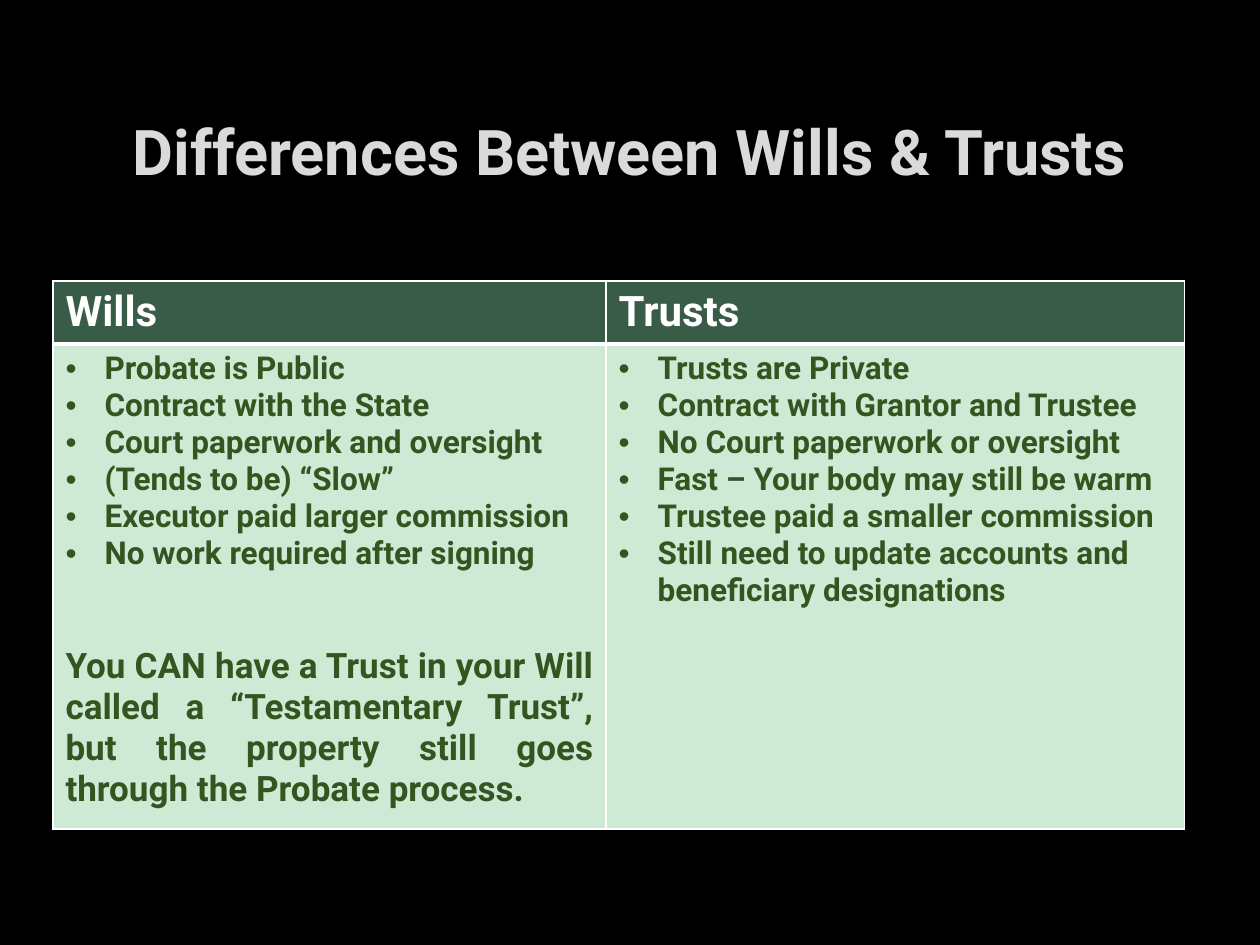
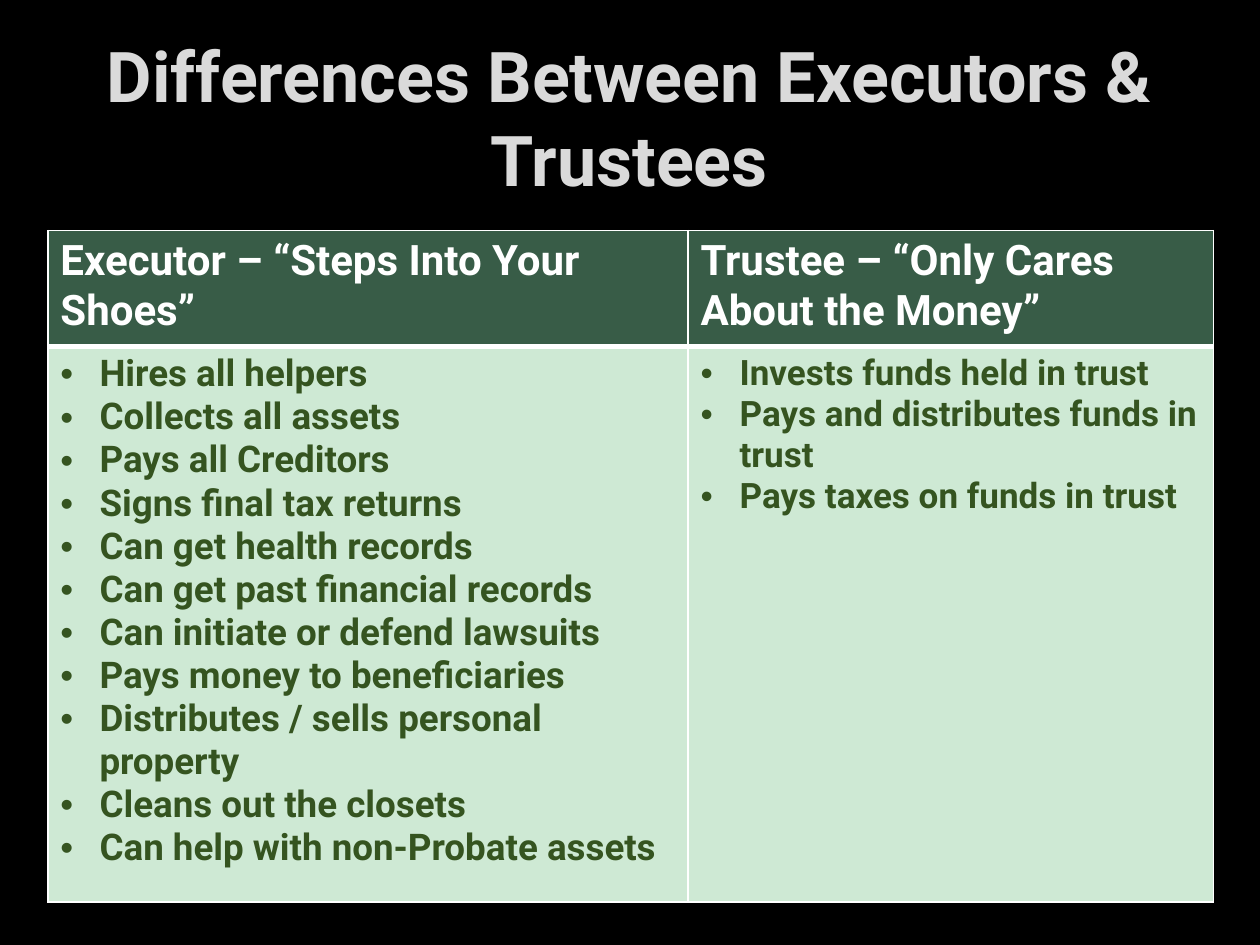
from lxml.etree import SubElement as Sub
from pptx import Presentation
from pptx.dml.color import RGBColor as RGB
from pptx.enum.text import MSO_ANCHOR as Anchor, MSO_AUTO_SIZE as Fit, PP_ALIGN as Align
from pptx.oxml import parse_xml
from pptx.oxml.ns import nsdecls, qn
from pptx.util import Inches, Pt

HUES = {"back": "000000", "title": "DADADA", "edge": "404040", "head": "385C47",
        "body": "CEE9D4", "white": "FFFFFF", "text": "355420"}
FONT = "Roboto"
INDENT = Inches(0.31)

deck = Presentation()
deck.slide_width, deck.slide_height = Inches(10), Inches(7.5)
COL, ROW = deck.slide_width / 100, deck.slide_height / 100

PAGES = [
    {"title": "Differences Between Wills & Trusts", "size": 36,
     "place": (7.5, 8.9, 84.9, 14.1), "spot": (4.2, 29.75),
     "cols": (43.9, 45.9), "rows": (6.67, 51.33),
     "heads": ("Wills", "Trusts"), "sizes": (18, 18),
     "lists": (
         ("Probate is Public", "Contract with the State",
          "Court paperwork and oversight", "(Tends to be) “Slow”",
          "Executor paid larger commission", "No work required after signing"),
         ("Trusts are Private", "Contract with Grantor and Trustee",
          "No Court paperwork or oversight", "Fast – Your body may still be warm",
          "Trustee paid a smaller commission",
          "Still need to update accounts and beneficiary designations")),
     "note": "You CAN have a Trust in your Will called a “Testamentary Trust”, "
             "but the property still goes through the Probate process."},
    {"title": "Differences Between Executors & Trustees", "size": 40,
     "place": (6, 2.3, 87.9, 20), "spot": (3.8, 24.4),
     "cols": (50.8, 41.7), "rows": (12.27, 58.8),
     "heads": ("Executor – “Steps Into Your Shoes”",
               "Trustee – “Only Cares About the Money”"), "sizes": (21, 20),
     "lists": (
         ("Hires all helpers", "Collects all assets", "Pays all Creditors",
          "Signs final tax returns", "Can get health records",
          "Can get past financial records", "Can initiate or defend lawsuits",
          "Pays money to beneficiaries", "Distributes / sells personal property",
          "Cleans out the closets", "Can help with non-Probate assets"),
         ("Invests funds held in trust", "Pays and distributes funds in trust",
          "Pays taxes on funds in trust")),
     "note": None},
]


def write(para, text, size, hue):
    run = para.add_run()
    run.text = text
    font = run.font
    font.name, font.size, font.bold = FONT, Pt(size), True
    font.color.rgb = RGB.from_string(HUES[hue])
    return run


def dress(cell, hue, top, base):
    cell.fill.solid()
    cell.fill.fore_color.rgb = RGB.from_string(HUES[hue])
    props = cell._tc.get_or_add_tcPr()
    for at, (side, wide) in enumerate(zip("LRTB", (1, 1, top, base))):
        props.insert(at, parse_xml(
            f'<a:ln{side} {nsdecls("a")} w="{Pt(wide)}"><a:solidFill>'
            f'<a:srgbClr val="{HUES["white"]}"/></a:solidFill></a:ln{side}>'))


for page in PAGES:
    slide = deck.slides.add_slide(deck.slide_layouts[5])
    slide.background.fill.solid()
    slide.background.fill.fore_color.rgb = RGB.from_string(HUES["back"])

    title = slide.shapes.title
    left, top, wide, high = page["place"]
    title.left, title.top = int(left * COL), int(top * ROW)
    title.width, title.height = int(wide * COL), int(high * ROW)
    frame = title.text_frame
    frame.auto_size, frame.word_wrap = Fit.NONE, True
    frame.vertical_anchor = Anchor.MIDDLE
    para = frame.paragraphs[0]
    para.alignment = Align.CENTER
    run = write(para, page["title"], page["size"], "title")
    run._r.get_or_add_rPr().insert(0, parse_xml(
        f'<a:ln {nsdecls("a")} w="{Pt(0.75)}"><a:solidFill>'
        f'<a:srgbClr val="{HUES["edge"]}"><a:alpha val="10000"/></a:srgbClr>'
        '</a:solidFill></a:ln>'))

    left, top = page["spot"]
    table = slide.shapes.add_table(
        2, 2, int(left * COL), int(top * ROW),
        int(sum(page["cols"]) * COL), int(sum(page["rows"]) * ROW)).table
    for line, high in zip(table.rows, page["rows"]):
        line.height = int(high * ROW)

    for num, wide in enumerate(page["cols"]):
        table.columns[num].width = int(wide * COL)
        head, body = table.cell(0, num), table.cell(1, num)
        dress(head, "head", 1, 3)
        dress(body, "body", 3, 1)
        write(head.text_frame.paragraphs[0], page["heads"][num], 24, "white")
        frame = body.text_frame
        for at, item in enumerate(page["lists"][num]):
            para = frame.add_paragraph() if at else frame.paragraphs[0]
            props = para._p.get_or_add_pPr()
            props.set("marL", str(INDENT))
            props.set("indent", str(-INDENT))
            Sub(props, qn("a:buFont"), typeface="Arial")
            Sub(props, qn("a:buChar"), char="•")
            write(para, item, page["sizes"][num], "text")

    if page["note"]:
        para = table.cell(1, 0).text_frame.add_paragraph()
        para.alignment = Align.JUSTIFY
        para.space_before = Pt(42)
        write(para, page["note"], 20, "text")

deck.save("out.pptx")
